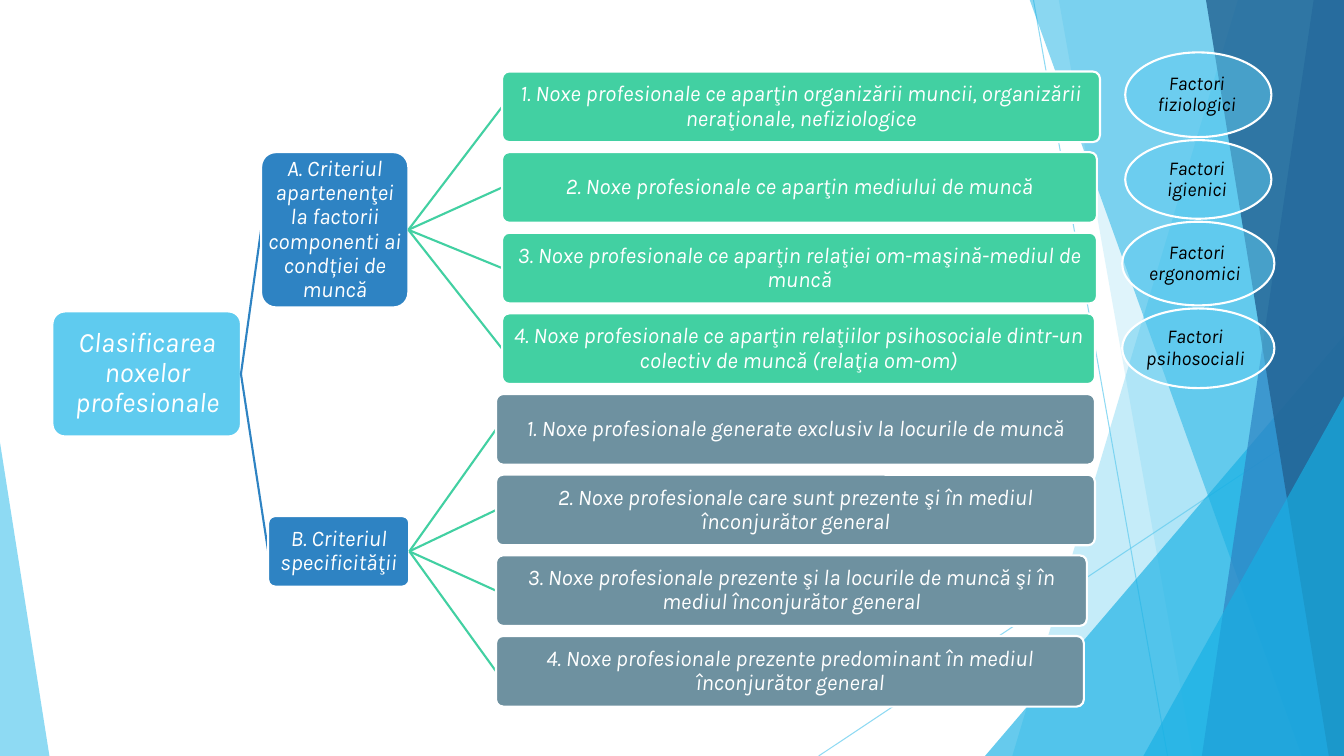
from pptx import Presentation
from pptx.dml.color import RGBColor
from pptx.enum import shapes, text
from pptx.oxml import ns, xmlchemy
from pptx.util import Inches, Pt

WHITE = RGBColor(0xFF, 0xFF, 0xFF)
BLACK = RGBColor(0x00, 0x00, 0x00)
SKY = RGBColor(0x5F, 0xCB, 0xEF)
CYAN = RGBColor(0x17, 0xB0, 0xE4)
BLUE = RGBColor(0x2E, 0x83, 0xC3)
NAVY = RGBColor(0x22, 0x62, 0x92)
GREEN = RGBColor(0x42, 0xD0, 0xA2)
SLATE = RGBColor(0x6E, 0x91, 0xA0)

FONT = "Karla"
WIDTH, HEIGHT = 13.33, 7.5
ROW_TOP, ROW_PITCH, ROW_HEIGHT = 0.71, 0.8, 0.7

# Each criterion: label, box (left, top, width, height), colour and left of its rows, rows (text, width)
CRITERIA = [
    ("A. Criteriul apartenenţei la factorii componenti ai condției de muncă",
     (2.59, 1.51, 1.46, 1.54), GREEN, 4.98, [
         ("1. Noxe profesionale ce aparţin organizării muncii, organizării neraţionale, nefiziologice", 5.93),
         ("2. Noxe profesionale ce aparţin mediului de muncă", 5.9),
         ("3. Noxe profesionale ce aparţin relaţiei om-maşină-mediul de muncă", 5.9),
         ("4. Noxe profesionale ce aparţin relaţiilor psihosociale dintr-un colectiv de muncă (relaţia om-om)", 5.88),
     ]),
    ("B. Criteriul specificităţii",
     (2.66, 5.12, 1.4, 0.7), SLATE, 4.92, [
         ("1. Noxe profesionale generate exclusiv la locurile de muncă", 5.94),
         ("2. Noxe profesionale care sunt prezente şi în mediul înconjurător general", 5.94),
         ("3. Noxe profesionale prezente şi la locurile de muncă şi în mediul înconjurător general", 5.86),
         ("4. Noxe profesionale prezente predominant în mediul înconjurător general", 5.83),
     ]),
]

# Each factor: text, ellipse (left, top, width, height), right text margin
FACTORS = [
    ("Factori fiziologici", (11.16, 0.52, 1.45, 0.84), 0.03),
    ("Factori igienici", (11.16, 1.39, 1.45, 0.78), 0.03),
    ("Factori psihosociali", (11.13, 3.06, 1.51, 0.79), 0.06),
    ("Factori ergonomici ", (11.13, 2.2, 1.51, 0.83), 0.03),
]


def set_opacity(shape, percent):
    colour = shape.element.spPr.find(".//" + ns.qn("a:srgbClr"))
    alpha = xmlchemy.OxmlElement("a:alpha")
    alpha.set("val", str(percent * 1000))
    colour.append(alpha)


def paint(shape, colour, opacity=100):
    shape.shadow.inherit = False
    shape.fill.solid()
    shape.fill.fore_color.rgb = colour
    if opacity < 100:
        set_opacity(shape, opacity)
    shape.line.fill.background()


def write(shape, words, size, colour=WHITE, margins=(0.01, 0.01)):
    frame = shape.text_frame
    frame.text = words
    frame.word_wrap = True
    frame.auto_size = text.MSO_AUTO_SIZE.NONE
    frame.vertical_anchor = text.MSO_ANCHOR.MIDDLE
    frame.margin_left, frame.margin_right = map(Inches, margins)
    frame.margin_top = frame.margin_bottom = Inches(0.01)
    para = frame.paragraphs[0]
    para.alignment = text.PP_ALIGN.CENTER
    para.line_spacing = 0.9
    font = para.runs[0].font
    font.name, font.size, font.italic = FONT, Pt(size), True
    font.color.rgb = colour


def add_node(page, kind, place, colour, opacity=100):
    node = page.shapes.add_shape(kind, *map(Inches, place))
    paint(node, colour, opacity)
    node.line.color.rgb = WHITE
    node.line.width = Pt(1.5)
    return node


def add_box(page, place, colour):
    box = add_node(page, shapes.MSO_SHAPE.ROUNDED_RECTANGLE, place, colour)
    box.adjustments[0] = 0.1
    return box


def add_line(page, start, end, colour, width):
    line = page.shapes.add_connector(
        shapes.MSO_CONNECTOR.STRAIGHT, *map(Inches, start + end))
    line.line.color.rgb = colour
    line.line.width = Pt(width)
    line.element.spPr.append(xmlchemy.OxmlElement("a:effectLst"))
    return line


def link(page, parent, child, colour):
    line = add_line(page, (0, 0), (1, 1), colour, 1.5)
    line.begin_connect(parent, 3)
    line.end_connect(child, 1)
    page.shapes.element.append(child.element)  # child's outline covers the line end


def add_slab(page, top_left, bottom_left, colour, opacity):
    """A full-height band that reaches the right edge of the page."""
    builder = page.shapes.build_freeform(Inches(top_left), Inches(-0.01))
    corners = [(WIDTH, -0.01), (WIDTH, HEIGHT), (bottom_left, HEIGHT)]
    builder.add_line_segments([(Inches(x), Inches(y)) for x, y in corners])
    paint(builder.convert_to_shape(), colour, opacity)


def add_corner(page, left, top, width, apex, colour, opacity):
    """A triangle standing on the bottom edge of the page."""
    corner = page.shapes.add_shape(
        shapes.MSO_SHAPE.ISOSCELES_TRIANGLE, Inches(left), Inches(top),
        Inches(width), Inches(HEIGHT - top))
    corner.adjustments[0] = apex
    paint(corner, colour, opacity)


def add_backdrop(page):
    for start, end in [((10.25, 0), (11.58, HEIGHT)), ((WIDTH, 4.03), (8.12, HEIGHT))]:
        set_opacity(add_line(page, start, end, SKY, 0.75), 70)
    add_slab(page, 12.28, 10.04, SKY, 36)
    add_slab(page, 10.5, 11.83, SKY, 20)
    add_corner(page, 9.77, 3.33, 3.56, 1, CYAN, 66)
    add_slab(page, 10.21, 12.91, CYAN, 50)
    add_slab(page, 13.03, 11.92, BLUE, 70)
    add_slab(page, 11.96, 13.18, NAVY, 80)
    add_corner(page, 11.34, 3.93, 1.99, 1, CYAN, 66)
    add_corner(page, 0, 4.39, 0.49, 0, SKY, 70)


def add_root(page):
    root = add_box(page, (0.52, 3.09, 1.87, 1.24), SKY)
    title = page.shapes.title
    title.left, title.top = Inches(0.56), Inches(3.12)
    title.width, title.height = Inches(1.8), Inches(1.17)
    write(title, "Clasificarea noxelor profesionale", 20)
    page.shapes.element.append(title.element)  # title sits on its box
    return root


def add_tree(page):
    root = add_root(page)
    row_top = ROW_TOP
    for label, place, colour, left, rows in CRITERIA:
        criterion = add_box(page, place, BLUE)
        write(criterion, label, 16)
        link(page, root, criterion, BLUE)
        for words, width in rows:
            row = add_box(page, (left, row_top, width, ROW_HEIGHT), colour)
            write(row, words, 16)
            link(page, criterion, row, GREEN)
            row_top += ROW_PITCH


def add_factors(page):
    for words, place, right_margin in FACTORS:
        factor = add_node(page, shapes.MSO_SHAPE.OVAL, place, SKY, 50)
        write(factor, words, 14, BLACK, (0, right_margin))


def main():
    deck = Presentation()
    deck.slide_width, deck.slide_height = Inches(WIDTH), Inches(HEIGHT)
    page = deck.slides.add_slide(deck.slide_layouts[5])
    add_backdrop(page)
    add_tree(page)
    add_factors(page)
    deck.save("out.pptx")


if __name__ == "__main__":
    main()
